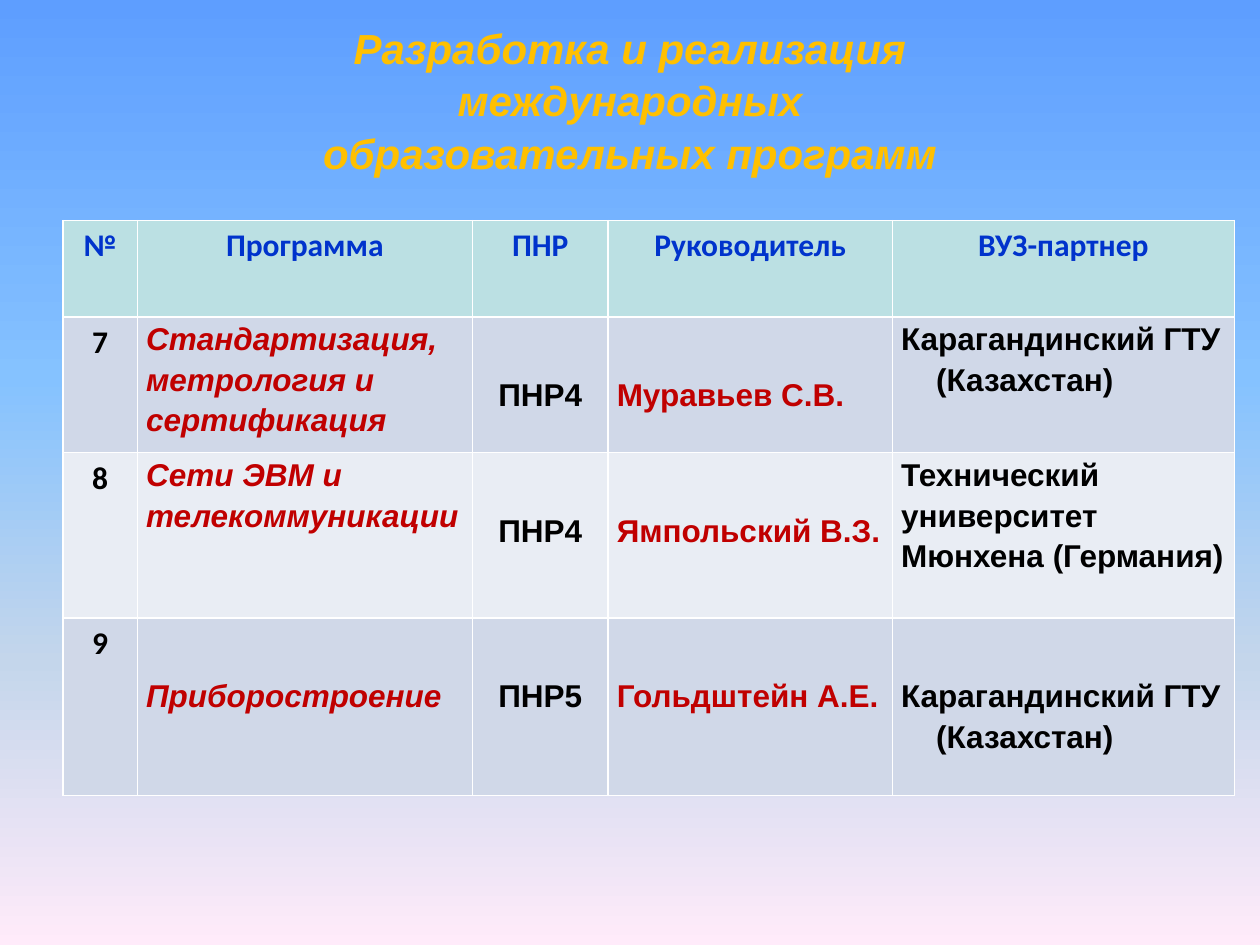
from lxml import etree
from pptx import Presentation
from pptx.dml.color import RGBColor
from pptx.enum.text import MSO_ANCHOR, PP_ALIGN
from pptx.oxml.ns import qn
from pptx.util import Pt

CENTER, LEFT = PP_ALIGN.CENTER, PP_ALIGN.LEFT
MIDDLE, TOP = MSO_ANCHOR.MIDDLE, MSO_ANCHOR.TOP
TITLE_ONLY = 5

TITLE = "Разработка и реализация\vмеждународных\vобразовательных программ"
HEADER = ("№", "Программа", "ПНР", "Руководитель", "ВУЗ-партнер")
PROGRAMS = [
    ("7", "Стандартизация, метрология и сертификация", "ПНР4",
     "Муравьев С.В.", "Карагандинский ГТУ (Казахстан)"),
    ("8", "Сети ЭВМ и телекоммуникации", "ПНР4",
     "Ямпольский В.З.", "Технический университет Мюнхена (Германия)"),
    ("9", "Приборостроение", "ПНР5",
     "Гольдштейн А.Е.", "Карагандинский ГТУ (Казахстан)"),
]
LOWERED = {(1, 2), (1, 3), (2, 2), (2, 3), (3, 1), (3, 2), (3, 3), (3, 4)}
HANGING = {(1, 4), (3, 4)}

THEME = {
    "sky": [(0, "5E9EFF"), (40, "85C2FF"), (70, "C4D6EB"), (100, "FFEBFA")],
    "header_fill": "BBE0E3",
    "bands": ("D0D8E8", "E9EDF4"),
    "title": {"name": "Arial", "size": Pt(24), "bold": True, "italic": True, "color": "FFC000"},
    "header": {"name": "Calibri", "size": Pt(18), "bold": True, "color": "0033CC"},
    "number": {"name": "Calibri", "size": Pt(18), "bold": True, "color": "000000"},
    "program": {"name": "Arial", "size": Pt(18), "bold": True, "italic": True, "color": "C00000"},
    "leader": {"name": "Arial", "size": Pt(18), "bold": True, "color": "C00000"},
    "plain": {"name": "Arial", "size": Pt(18), "bold": True, "color": "000000"},
}
COLUMNS = [
    (42.5, "number", CENTER),
    (191.5, "program", LEFT),
    (77.5, "plain", CENTER),
    (162.5, "leader", LEFT),
    (195.5, "plain", LEFT),
]
ROW_HEIGHTS = (55.2, 77.5, 94.5, 101.5)
TABLE_LEFT, TABLE_TOP = 36, 126
SIDE_INSET, LOWERED_INSET, HANG = 5, 32, 20


def apply(target, values):
    for key, value in values.items():
        setattr(target, key, value)


def write(frame, text, style, align):
    frame.text = text
    paragraph = frame.paragraphs[0]
    paragraph.alignment = align
    for run in paragraph.runs:
        apply(run.font, {k: v for k, v in THEME[style].items() if k != "color"})
        run.font.color.rgb = RGBColor.from_string(THEME[style]["color"])
    return paragraph


def paint_sky(slide):
    fill = slide.background.fill
    fill.gradient()
    fill.gradient_angle = 270
    stops = fill.gradient_stops[0]._gs.getparent()
    for stop in list(stops):
        stops.remove(stop)
    for position, color in THEME["sky"]:
        stop = etree.SubElement(stops, qn("a:gs"), pos=str(position * 1000))
        etree.SubElement(stop, qn("a:srgbClr"), val=color)


def add_title(slide):
    title = slide.shapes.title
    apply(title, {"left": Pt(36), "top": Pt(11.5), "width": Pt(648), "height": Pt(90)})
    title.text_frame.vertical_anchor = MIDDLE
    write(title.text_frame, TITLE, "title", CENTER).line_spacing = 1.05


def add_programs(slide):
    rows = [HEADER] + PROGRAMS
    table = slide.shapes.add_table(
        len(rows), len(COLUMNS), Pt(TABLE_LEFT), Pt(TABLE_TOP),
        Pt(sum(column[0] for column in COLUMNS)), Pt(sum(ROW_HEIGHTS))).table
    for column, (width, _, _) in zip(table.columns, COLUMNS):
        column.width = Pt(width)
    for r, (texts, height) in enumerate(zip(rows, ROW_HEIGHTS)):
        table.rows[r].height = Pt(height)
        for c, (text, (_, style, align)) in enumerate(zip(texts, COLUMNS)):
            cell = table.cell(r, c)
            cell.vertical_anchor = TOP
            cell.fill.solid()
            color = THEME["bands"][(r - 1) % 2] if r else THEME["header_fill"]
            cell.fill.fore_color.rgb = RGBColor.from_string(color)
            if r == 0:
                style, align = "header", CENTER
            paragraph = write(cell.text_frame, text, style, align)
            if r and c:
                paragraph.line_spacing = 1.15
                apply(cell, {
                    "margin_left": Pt(SIDE_INSET), "margin_right": Pt(SIDE_INSET),
                    "margin_top": Pt(LOWERED_INSET if (r, c) in LOWERED else 0),
                    "margin_bottom": Pt(0)})
            if (r, c) in HANGING:
                properties = paragraph._p.get_or_add_pPr()
                properties.set("marL", str(Pt(HANG)))
                properties.set("indent", str(-Pt(HANG)))


def main():
    deck = Presentation()
    apply(deck, {"slide_width": Pt(720), "slide_height": Pt(540)})
    slide = deck.slides.add_slide(deck.slide_layouts[TITLE_ONLY])
    paint_sky(slide)
    add_title(slide)
    add_programs(slide)
    deck.save("out.pptx")


if __name__ == "__main__":
    main()
